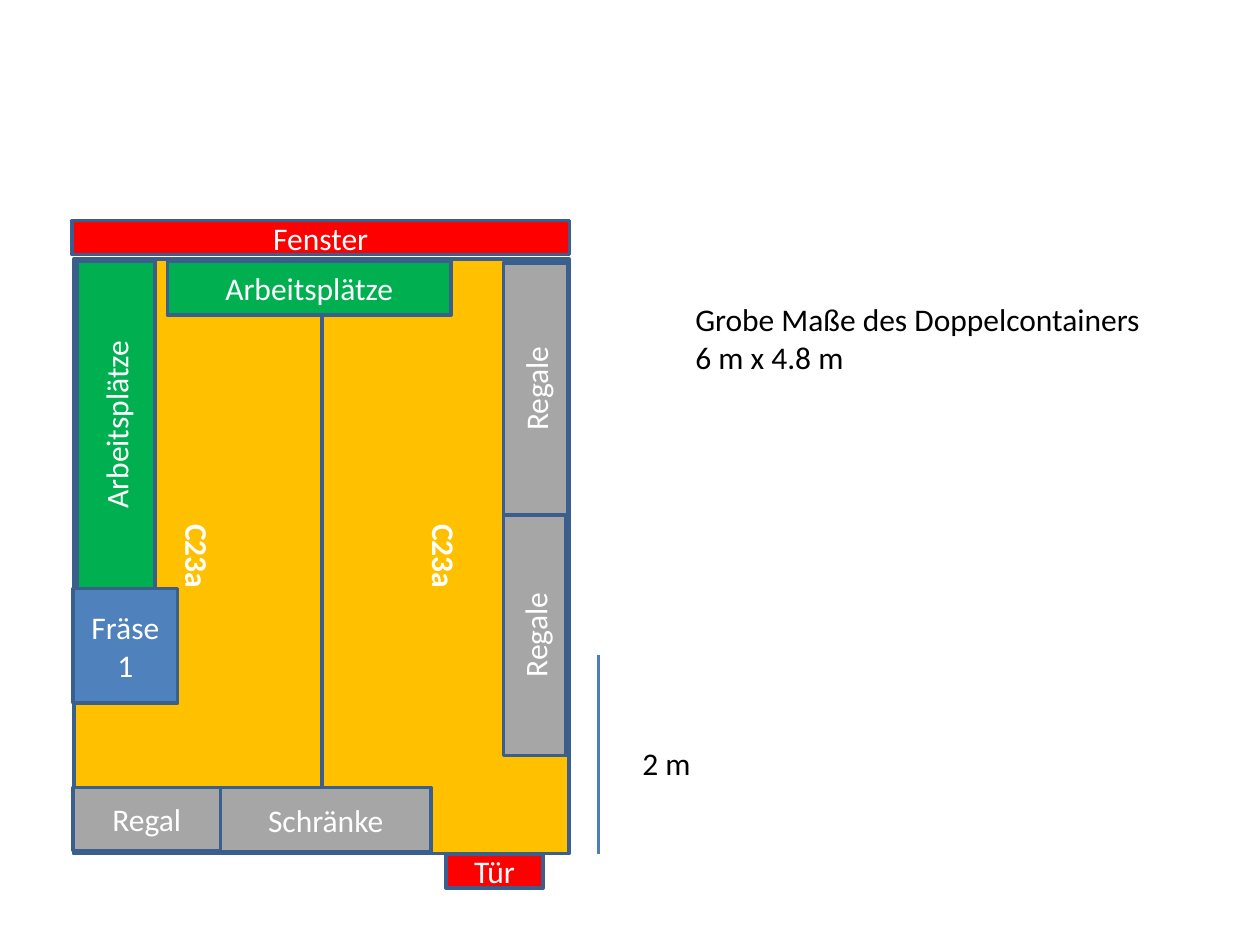
import pptx
import pptx.util
import pptx.dml.color
import pptx.enum.shapes
import pptx.enum.text
import pptx.oxml.ns
import lxml.etree

Inches, Pt = pptx.util.Inches, pptx.util.Pt
RGB = pptx.dml.color.RGBColor.from_string
ALIGN = pptx.enum.text.PP_ALIGN

COLORS = {
    "floor": "FFC000", "desk": "00B050", "shelf": "A6A6A6",
    "opening": "FF0000", "mill": "4F81BD", "outline": "3A5F8C",
    "scale": "4B7EBC", "light": "FFFFFF", "dark": "000000",
}


def add_lines(tf, lines, color, align, bold=None):
    for i, line in enumerate(lines):
        p = tf.paragraphs[0] if i == 0 else tf.add_paragraph()
        p.alignment = align
        r = p.add_run()
        r.text = line
        r.font.name = "Calibri"
        r.font.size = Pt(18)
        r.font.bold = bold
        r.font.color.rgb = RGB(COLORS[color])


def add_block(s, lines, kind, left, top, width, height, rotation=0):
    sp = s.shapes.add_shape(
        pptx.enum.shapes.MSO_SHAPE.RECTANGLE,
        Inches(left), Inches(top), Inches(width), Inches(height))
    sp.rotation = rotation
    sp.shadow.inherit = False
    sp.fill.solid()
    sp.fill.fore_color.rgb = RGB(COLORS[kind])
    sp.line.color.rgb = RGB(COLORS["outline"])
    sp.line.width = Pt(2)
    tf = sp.text_frame
    tf.word_wrap = True
    tf.vertical_anchor = pptx.enum.text.MSO_ANCHOR.MIDDLE
    add_lines(tf, lines, "light", ALIGN.CENTER, kind == "floor")


prs = pptx.Presentation()
prs.slide_width, prs.slide_height = Inches(10), Inches(7.5)
s = prs.slides.add_slide(prs.slide_layouts[6])

# Two container halves, then furniture, window and door
for block in [
    (["C23a"], "floor", 1.17, 3.43, 4.72, 1.97, 90),
    (["C23a"], "floor", -0.79, 3.43, 4.72, 1.97, 90),
    (["Fräse", "1"], "mill", 0.58, 4.67, 0.83, 0.91),
    (["Arbeitsplätze"], "desk", -0.38, 3.06, 2.6, 0.62, 270),
    (["Arbeitsplätze"], "desk", 1.33, 2.07, 2.25, 0.43),
    (["Fenster"], "opening", 0.57, 1.75, 3.95, 0.27),
    (["Tür"], "opening", 3.54, 6.78, 0.77, 0.27),
    (["Schränke"], "shelf", 1.75, 6.25, 1.67, 0.51),
    (["Regale"], "shelf", 3.29, 4.79, 1.91, 0.5, 270),
    (["Regale"], "shelf", 3.25, 2.83, 2, 0.51, 270),
    (["Regal"], "shelf", 0.58, 6.25, 1.17, 0.5),
]:
    add_block(s, *block)

# Scale bar
line = s.shapes.add_connector(
    pptx.enum.shapes.MSO_CONNECTOR.STRAIGHT,
    Inches(4.75), Inches(5.2), Inches(4.75), Inches(6.78))
line.line.color.rgb = RGB(COLORS["scale"])
line.line.width = Pt(2)
lxml.etree.SubElement(line._element.spPr, pptx.oxml.ns.qn("a:effectLst"))

# Dimensions and scale label
for lines, left, top, width, height in [
    (["Grobe Maße des Doppelcontainers", "6 m x 4.8 m"], 5.42, 2.33, 3.77, 0.71),
    (["2 m"], 5, 5.86, 0.59, 0.4),
]:
    tb = s.shapes.add_textbox(
        Inches(left), Inches(top), Inches(width), Inches(height))
    tf = tb.text_frame
    tf.word_wrap = False
    tf.auto_size = pptx.enum.text.MSO_AUTO_SIZE.SHAPE_TO_FIT_TEXT
    add_lines(tf, lines, "dark", ALIGN.LEFT)

prs.save("out.pptx")
